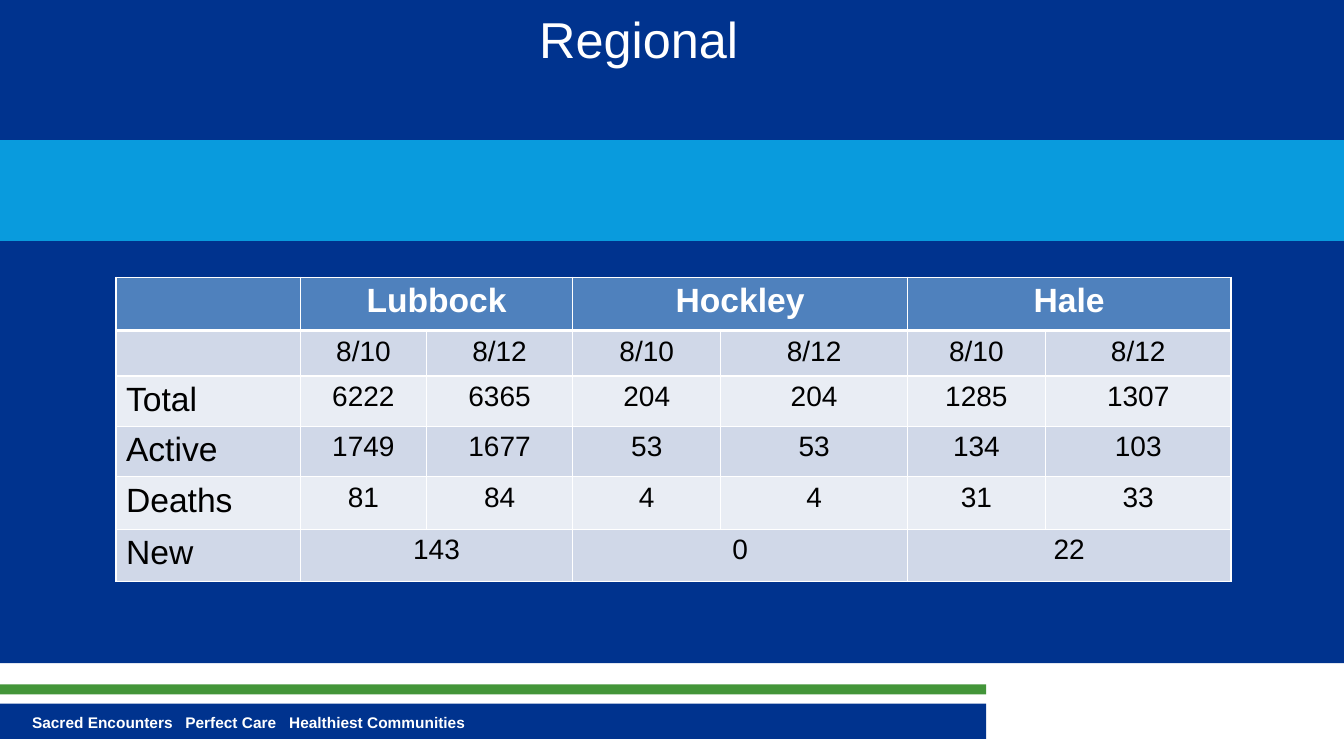
from dataclasses import dataclass

import lxml.etree
import pptx
import pptx.dml.color
import pptx.enum.shapes
import pptx.enum.text
import pptx.oxml.ns
import pptx.util

Inches = pptx.util.Inches
Align = pptx.enum.text.PP_ALIGN


@dataclass(frozen=True)
class Theme:
    font: str = "Arial"
    navy: str = "00338E"
    sky: str = "099BDD"
    green: str = "439539"
    white: str = "FFFFFF"
    black: str = "000000"
    header: str = "4F81BD"
    bands: tuple[str, str] = ("D0D8E8", "E9EDF4")
    title_size: int = 36
    label_size: int = 24
    figure_size: int = 20
    footer_size: int = 11
    rule_width: int = 1
    header_rule_width: int = 3


@dataclass(frozen=True)
class Band:
    left: float
    top: float
    width: float
    height: float
    color: str


@dataclass(frozen=True)
class Caption:
    text: str
    left: float
    top: float
    width: float
    height: float
    size: int
    bold: bool
    align: Align
    tab_stops: tuple[float, ...] = ()


@dataclass(frozen=True)
class County:
    name: str
    counts: tuple[tuple[int, int], ...]
    new_cases: int


THEME = Theme()
BACKDROP = (
    Band(0, 0, 13.33, 6.58, THEME.navy),
    Band(-0.03, 6.98, 9.81, 0.35, THEME.navy),
    Band(-0.03, 6.79, 9.81, 0.1, THEME.green),
    Band(0, 1.39, 13.33, 1, THEME.sky),
)
CAPTIONS = (
    Caption("Sacred Encounters\tPerfect Care\tHealthiest Communities",
            0.22, 7.03, 8.33, 0.29, THEME.footer_size, True, Align.LEFT, (1.52, 2.55)),
    Caption("Regional", 0.58, 0.03, 11.51, 1.51, THEME.title_size, False, Align.CENTER),
)
DATES = ("8/10", "8/12")
MEASURES = ("Total", "Active", "Deaths")
COUNTIES = (
    County("Lubbock", ((6222, 6365), (1749, 1677), (81, 84)), 143),
    County("Hockley", ((204, 204), (53, 53), (4, 4)), 0),
    County("Hale", ((1285, 1307), (134, 103), (31, 33)), 22),
)
COLUMN_WIDTHS = (1.83, 1.25, 1.45, 1.47, 1.85, 1.37, 1.84)
ROW_HEIGHTS = (0.53, 0.45, 0.48, 0.5, 0.52, 0.52)


def rgb(color: str) -> pptx.dml.color.RGBColor:
    return pptx.dml.color.RGBColor.from_string(color)


def style_paragraph(paragraph, size: int, color: str, bold: bool, align: Align) -> None:
    paragraph.alignment = align
    font = paragraph.font
    font.name = THEME.font
    font.size = pptx.util.Pt(size)
    font.bold = bold
    font.color.rgb = rgb(color)


def add_tab_stops(paragraph, positions: tuple[float, ...]) -> None:
    properties = paragraph._p.get_or_add_pPr()
    stops = lxml.etree.SubElement(properties, pptx.oxml.ns.qn("a:tabLst"))
    for position in positions:
        lxml.etree.SubElement(stops, pptx.oxml.ns.qn("a:tab"),
                              pos=str(Inches(position)), algn="l")


def draw_band(slide, band: Band) -> None:
    stripe = slide.shapes.add_shape(
        pptx.enum.shapes.MSO_SHAPE.RECTANGLE, Inches(band.left), Inches(band.top),
        Inches(band.width), Inches(band.height))
    stripe.shadow.inherit = False
    stripe.fill.solid()
    stripe.fill.fore_color.rgb = rgb(band.color)
    stripe.line.fill.background()


def draw_caption(slide, caption: Caption) -> None:
    frame = slide.shapes.add_textbox(
        Inches(caption.left), Inches(caption.top),
        Inches(caption.width), Inches(caption.height)).text_frame
    frame.word_wrap = True
    paragraph = frame.paragraphs[0]
    paragraph.text = caption.text
    if caption.tab_stops:
        add_tab_stops(paragraph, caption.tab_stops)
    style_paragraph(paragraph, caption.size, THEME.white, caption.bold, caption.align)


def add_cell_borders(cell, row: int) -> None:
    properties = cell._tc.get_or_add_tcPr()
    for side in "LRTB":
        under_header = (row, side) in ((0, "B"), (1, "T"))
        width = THEME.header_rule_width if under_header else THEME.rule_width
        border = lxml.etree.SubElement(properties, pptx.oxml.ns.qn(f"a:ln{side}"),
                                       w=str(pptx.util.Pt(width)))
        fill = lxml.etree.SubElement(border, pptx.oxml.ns.qn("a:solidFill"))
        lxml.etree.SubElement(fill, pptx.oxml.ns.qn("a:srgbClr"), val=THEME.white)


def case_rows() -> list[list[str]]:
    rows = [["", *(text for county in COUNTIES for text in (county.name, ""))],
            ["", *DATES * len(COUNTIES)]]
    for index, measure in enumerate(MEASURES):
        rows.append([measure, *(str(count) for county in COUNTIES
                                for count in county.counts[index])])
    rows.append(["New", *(text for county in COUNTIES
                          for text in (str(county.new_cases), ""))])
    return rows


def draw_case_table(slide) -> None:
    rows = case_rows()
    cases = slide.shapes.add_table(
        len(rows), len(COLUMN_WIDTHS), Inches(1.15), Inches(2.75),
        Inches(sum(COLUMN_WIDTHS)), Inches(sum(ROW_HEIGHTS))).table
    cases.first_row = False
    cases.horz_banding = False
    for column, width in zip(cases.columns, COLUMN_WIDTHS):
        column.width = Inches(width)
    for row, height in zip(cases.rows, ROW_HEIGHTS):
        row.height = Inches(height)
    for row, texts in enumerate(rows):
        is_header = row == 0
        for column, text in enumerate(texts):
            cell = cases.cell(row, column)
            add_cell_borders(cell, row)
            cell.fill.solid()
            cell.fill.fore_color.rgb = rgb(
                THEME.header if is_header else THEME.bands[(row - 1) % 2])
            if text:
                cell.text = text
                is_label = column == 0
                style_paragraph(
                    cell.text_frame.paragraphs[0],
                    THEME.label_size if is_header or is_label else THEME.figure_size,
                    THEME.white if is_header else THEME.black,
                    is_header, Align.LEFT if is_label else Align.CENTER)
    for row in (0, len(rows) - 1):
        for column in range(1, len(COLUMN_WIDTHS), len(DATES)):
            cases.cell(row, column).merge(cases.cell(row, column + 1))


def main() -> None:
    presentation = pptx.Presentation()
    presentation.slide_width = Inches(13.33)
    presentation.slide_height = Inches(7.5)
    slide = presentation.slides.add_slide(presentation.slide_layouts[6])
    for band in BACKDROP:
        draw_band(slide, band)
    for caption in CAPTIONS:
        draw_caption(slide, caption)
    draw_case_table(slide)
    presentation.save("out.pptx")


if __name__ == "__main__":
    main()
